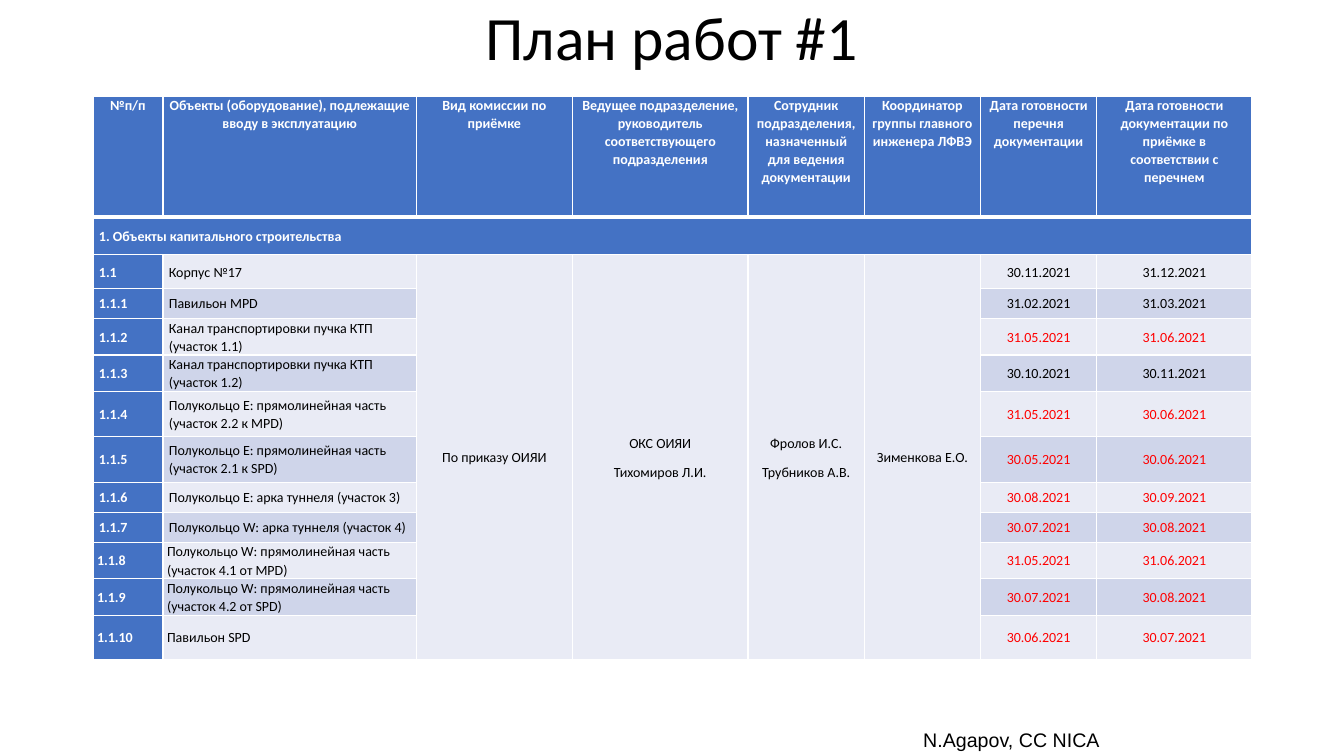
import dataclasses

import pptx
import pptx.dml.color
import pptx.enum.text
import pptx.oxml
import pptx.oxml.ns
import pptx.util

Pt = pptx.util.Pt
Align = pptx.enum.text.PP_ALIGN
Anchor = pptx.enum.text.MSO_ANCHOR


@dataclasses.dataclass(frozen=True)
class Theme:
    blue: str = "4472C4"
    pale: str = "E9EBF5"
    band: str = "CFD5EA"
    white: str = "FFFFFF"
    black: str = "000000"
    red: str = "FF0000"
    main: str = "Calibri"
    foot: str = "Arial"
    head: int = 44
    cell: int = 10
    note: int = 14


THEME = Theme()

# Table geometry in points
COLS = (50, 181, 111.5, 125.5, 83, 83, 83, 111)
ROWS = (86.5, 27, 24, 21.5, 26, 26, 32.5, 32.5, 21.5, 21.5, 26, 26, 32)
WIDE, SLIM = 4.3, 3  # side margins of the cells

# Table content
HEADS = (
    "№п/п",
    "Объекты (оборудование), подлежащие вводу в эксплуатацию",
    "Вид комиссии по приёмке",
    "Ведущее подразделение, руководитель соответствующего подразделения",
    "Сотрудник подразделения, назначенный для ведения документации",
    "Координатор группы главного инженера ЛФВЭ",
    "Дата готовности перечня документации",
    "Дата готовности документации по приёмке в соответствии с перечнем",
)
PART = "1. Объекты капитального строительства"
STAFF = (
    "По приказу ОИЯИ",
    "ОКС ОИЯИ\nТихомиров Л.И.",
    "Фролов И.С.\nТрубников А.В.",
    "Зименкова Е.О.",
)
ITEMS = (
    ("1.1", "Корпус №17", "30.11.2021", "31.12.2021"),
    ("1.1.1", "Павильон MPD", "31.02.2021", "31.03.2021"),
    ("1.1.2", "Канал транспортировки пучка КТП (участок 1.1)", "31.05.2021", "31.06.2021"),
    ("1.1.3", "Канал транспортировки пучка КТП (участок 1.2)", "30.10.2021", "30.11.2021"),
    ("1.1.4", "Полукольцо Е: прямолинейная часть (участок 2.2 к MPD)", "31.05.2021", "30.06.2021"),
    ("1.1.5", "Полукольцо Е: прямолинейная часть (участок 2.1 к SPD)", "30.05.2021", "30.06.2021"),
    ("1.1.6", "Полукольцо Е: арка туннеля (участок 3)", "30.08.2021", "30.09.2021"),
    ("1.1.7", "Полукольцо W: арка туннеля (участок 4)", "30.07.2021", "30.08.2021"),
    ("1.1.8", "Полукольцо W: прямолинейная часть (участок 4.1 от MPD)", "31.05.2021", "31.06.2021"),
    ("1.1.9", "Полукольцо W: прямолинейная часть (участок 4.2 от SPD)", "30.07.2021", "30.08.2021"),
    ("1.1.10", "Павильон SPD", "30.06.2021", "30.07.2021"),
)
CALM = ("1.1", "1.1.1", "1.1.3")  # items with dates in black
SLIMS = ("1.1.8", "1.1.9", "1.1.10")  # items with narrow margins


def apply(item, **vals):
    for name, val in vals.items():
        setattr(item, name, val)


def tint(text):
    return pptx.dml.color.RGBColor.from_string(text)


def write(frame, text, size, face, color, bold=False, **form):
    """Fill a text frame, one paragraph for each line of the text."""
    frame.text = text
    for para in frame.paragraphs:
        apply(para, **form)
        for run in para.runs:
            apply(run.font, size=Pt(size), name=face, bold=bold)
            run.font.color.rgb = tint(color)


def edge(cell, **widths):
    """Draw white borders; each side is 1 point unless given."""
    props = cell._tc.get_or_add_tcPr()
    for side in "LRTB":
        width = int(Pt(widths.get(side, 1)))
        props.append(pptx.oxml.parse_xml(
            f'<a:ln{side} {pptx.oxml.ns.nsdecls("a")} w="{width}"><a:solidFill>'
            f'<a:srgbClr val="{THEME.white}"/></a:solidFill></a:ln{side}>'))


def paint(cell, fill, **widths):
    edge(cell, **widths)
    cell.fill.solid()
    cell.fill.fore_color.rgb = tint(fill)


def label(cell, text, color, bold=False, align=Align.CENTER,
          anchor=Anchor.MIDDLE, side=WIDE):
    apply(cell, margin_left=Pt(side), margin_right=Pt(side),
          margin_top=0, margin_bottom=0, vertical_anchor=anchor)
    write(cell.text_frame, text, THEME.cell, THEME.main, color, bold,
          alignment=align, line_spacing=1.07, space_after=Pt(8))


def add_plan(slide):
    grid = slide.shapes.add_table(
        len(ROWS), len(COLS), Pt(66.4), Pt(68.6), Pt(sum(COLS)), Pt(sum(ROWS))).table
    grid.horz_banding = False
    for col, width in zip(grid.columns, COLS):
        col.width = Pt(width)
    for row, height in zip(grid.rows, ROWS):
        row.height = Pt(height)

    # Fills and borders
    for r in range(len(ROWS)):
        for c in range(len(COLS)):
            rest = THEME.pale if r % 2 == 0 or 2 <= c <= 5 else THEME.band
            fill = THEME.blue if r < 2 or c == 0 else rest
            paint(grid.cell(r, c), fill, **({"B": 3}, {"T": 3})[r] if r < 2 else {})

    # Header and section rows
    for c, text in enumerate(HEADS):
        label(grid.cell(0, c), text, THEME.white, True, anchor=Anchor.TOP)
    grid.cell(1, 0).merge(grid.cell(1, len(COLS) - 1))
    label(grid.cell(1, 0), PART, THEME.white, True, Align.LEFT)

    # Cells shared by all items
    for c, text in enumerate(STAFF, 2):
        grid.cell(2, c).merge(grid.cell(len(ROWS) - 1, c))
        label(grid.cell(2, c), text, THEME.black)

    # Items with their dates
    for r, (num, name, first, last) in enumerate(ITEMS, 2):
        side = SLIM if num in SLIMS else WIDE
        color = THEME.black if num in CALM else THEME.red
        label(grid.cell(r, 0), num, THEME.white, True, Align.LEFT, side=side)
        label(grid.cell(r, 1), name, THEME.black, align=Align.LEFT, side=side)
        for c, date in ((6, first), (7, last)):
            label(grid.cell(r, c), date, color, side=side)


def add_title(slide, text):
    title = slide.shapes.title
    apply(title, left=Pt(66), top=Pt(1.5), width=Pt(828), height=Pt(55.5))
    title.text_frame.vertical_anchor = Anchor.MIDDLE
    write(title.text_frame, text, THEME.head, THEME.main, THEME.black,
          alignment=Align.CENTER, line_spacing=0.9)


def add_note(slide, text):
    box = slide.shapes.add_textbox(Pt(608.5), Pt(502.5), Pt(228), Pt(37.5))
    apply(box.text_frame, word_wrap=True, vertical_anchor=Anchor.BOTTOM)
    write(box.text_frame, text, THEME.note, THEME.foot, THEME.black,
          alignment=Align.CENTER)


def main():
    deck = pptx.Presentation()
    apply(deck, slide_width=Pt(960), slide_height=Pt(540))
    slide = deck.slides.add_slide(deck.slide_layouts[5])
    add_plan(slide)
    add_title(slide, "План работ #1")
    add_note(slide, "N.Agapov, CC NICA")
    deck.save("out.pptx")


if __name__ == "__main__":
    main()
